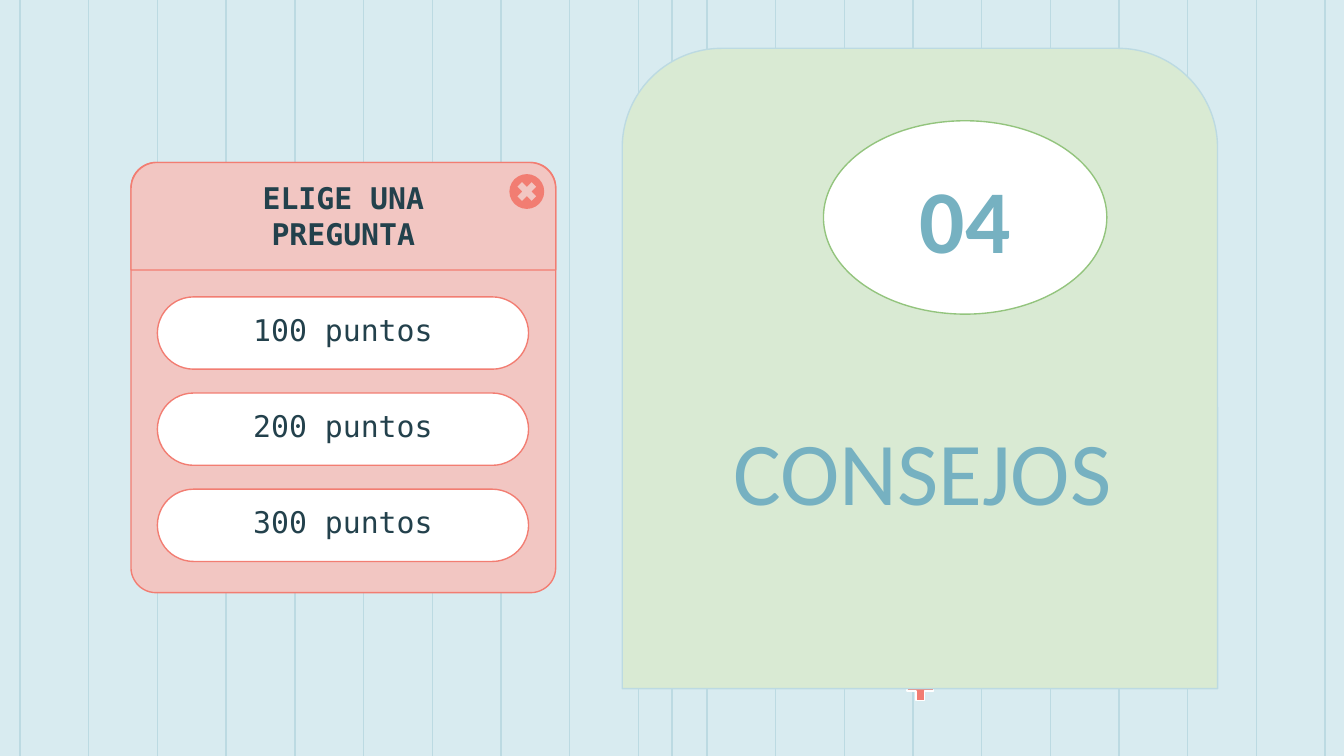
import pptx
import pptx.util
import pptx.dml.color
import pptx.enum.shapes
import pptx.enum.text
import pptx.oxml.ns
import lxml.etree

COLORS = {
    "sky": "D8EBF0", "rule": "BCDAE2", "coral": "F27D72", "pink": "F2C6C2",
    "white": "FFFFFF", "ink": "23414C", "mint": "D9EAD3", "leaf": "93C47D",
    "teal": "76B1C1",
}
MONO, SANS = "DejaVu Sans Mono", "Calibri"
SLIDE = (0, 0, 10, 5.625)
SHAPE = pptx.enum.shapes.MSO_SHAPE
qn = pptx.oxml.ns.qn


def rgb(name):
    return pptx.dml.color.RGBColor.from_string(COLORS[name])


def within(box, x, y, w, h):
    """Box given in percent of the width and height of another box."""
    left, top, width, height = box
    return (left + width * x / 100, top + height * y / 100,
            width * w / 100, height * h / 100)


def add_part(slide, kind, box, fill, line=None, adjust=()):
    sp = slide.shapes.add_shape(kind, *map(pptx.util.Inches, box))
    sp.shadow.inherit = False
    sp.fill.solid()
    sp.fill.fore_color.rgb = rgb(fill)
    if line:
        sp.line.color.rgb = rgb(line)
        sp.line.width = pptx.util.Pt(0.75)
    else:
        sp.line.fill.background()
    for i, value in enumerate(adjust):
        sp.adjustments[i] = value
    return sp


def write(sp, text, size, font, color, bold=False, insets=(0.1, 0.1, 0.1, 0.1)):
    tf = sp.text_frame
    tf.text = text
    tf.word_wrap = True
    tf.auto_size = pptx.enum.text.MSO_AUTO_SIZE.NONE
    tf.vertical_anchor = pptx.enum.text.MSO_ANCHOR.MIDDLE
    (tf.margin_left, tf.margin_top,
     tf.margin_right, tf.margin_bottom) = map(pptx.util.Inches, insets)
    p = tf.paragraphs[0]
    p.alignment = pptx.enum.text.PP_ALIGN.CENTER
    r = p.runs[0]
    r.font.size = pptx.util.Pt(size)
    r.font.name = font
    r.font.bold = bold
    r.font.color.rgb = rgb(color)
    return p


def add_text_shadow(r, color):
    effects = lxml.etree.Element(qn("a:effectLst"))
    shadow = lxml.etree.SubElement(effects, qn("a:outerShdw"), dist="38100",
                                   dir="2700000", algn="bl", rotWithShape="0")
    lxml.etree.SubElement(shadow, qn("a:srgbClr"), val=COLORS[color])
    r.font._element.find(qn("a:solidFill")).addnext(effects)


def draw_background(slide, box):
    slide.background.fill.solid()
    slide.background.fill.fore_color.rgb = rgb("sky")
    left, top, width, height = box
    # Evenly spaced rules, and one on the centre line
    xs = [left + 0.15 + 0.511 * i for i in range(20)] + [left + width / 2]
    for x in xs:
        line = slide.shapes.add_connector(
            pptx.enum.shapes.MSO_CONNECTOR.STRAIGHT,
            *map(pptx.util.Inches, (x, top, x, top + height)))
        line.line.color.rgb = rgb("rule")
        line.line.width = pptx.util.Pt(0.75)
        lxml.etree.SubElement(line._element.spPr, qn("a:effectLst"))


def draw_question_card(slide, box):
    add_part(slide, SHAPE.ROUNDED_RECTANGLE, box, "pink", "coral", [0.059])

    # Header with close button
    header = add_part(slide, SHAPE.ROUND_2_SAME_RECTANGLE,
                      within(box, 0, 0, 100, 25), "pink", "coral", [0.242, 0])
    write(header, "ELIGE UNA PREGUNTA", 16, MONO, "ink", True,
          (0.4, 0.03, 0.4, 0.1))
    close = within(box, 89.1, 2.7, 8.2, 8.1)
    add_part(slide, SHAPE.OVAL, close, "coral")
    add_part(slide, SHAPE.MATH_MULTIPLY, within(close, 11, 11, 78, 78),
             "pink", adjust=[0.235])

    # Answer buttons
    for i in range(3):
        button = add_part(slide, SHAPE.ROUNDED_RECTANGLE,
                          within(box, 6.2, 31.25 + 22.35 * i, 87.4, 16.8),
                          "white", "coral", [0.5])
        write(button, f"{100 * (i + 1)} puntos", 16, MONO, "ink",
              insets=(0.1, 0.05, 0.1, 0.1))


def draw_section_panel(slide, box):
    # Plus sign peeking out under the panel
    add_part(slide, SHAPE.MATH_PLUS, within(box, 47, 96.9, 6.1, 5.66),
             "coral", "white", [0.235])
    add_part(slide, SHAPE.ROUND_2_SAME_RECTANGLE, box, "mint", "rule",
             [0.167, 0])

    # Section number
    number = add_part(slide, SHAPE.OVAL, within(box, 33.8, 11.3, 47.6, 30.2),
                      "white", "leaf")
    write(number, "04", 48, SANS, "teal", True)

    # Section title, brought in front of the panel
    title = slide.shapes.title
    title.left, title.top, title.width, title.height = map(
        pptx.util.Inches, within(box, 1.8, 56.8, 97.3, 21.2))
    p = write(title, "CONSEJOS", 48, SANS, "teal")
    p.line_spacing = 0.8
    add_text_shadow(p.runs[0], "white")
    number._element.addnext(title._element)


def main():
    prs = pptx.Presentation()
    prs.slide_width, prs.slide_height = map(pptx.util.Inches, SLIDE[2:])
    slide = prs.slides.add_slide(prs.slide_layouts[5])
    draw_background(slide, SLIDE)
    draw_question_card(slide, within(SLIDE, 9.75, 21.5, 31.6, 56.9))
    draw_section_panel(slide, within(SLIDE, 46.3, 6.4, 44.3, 84.7))
    prs.save("out.pptx")


if __name__ == "__main__":
    main()
